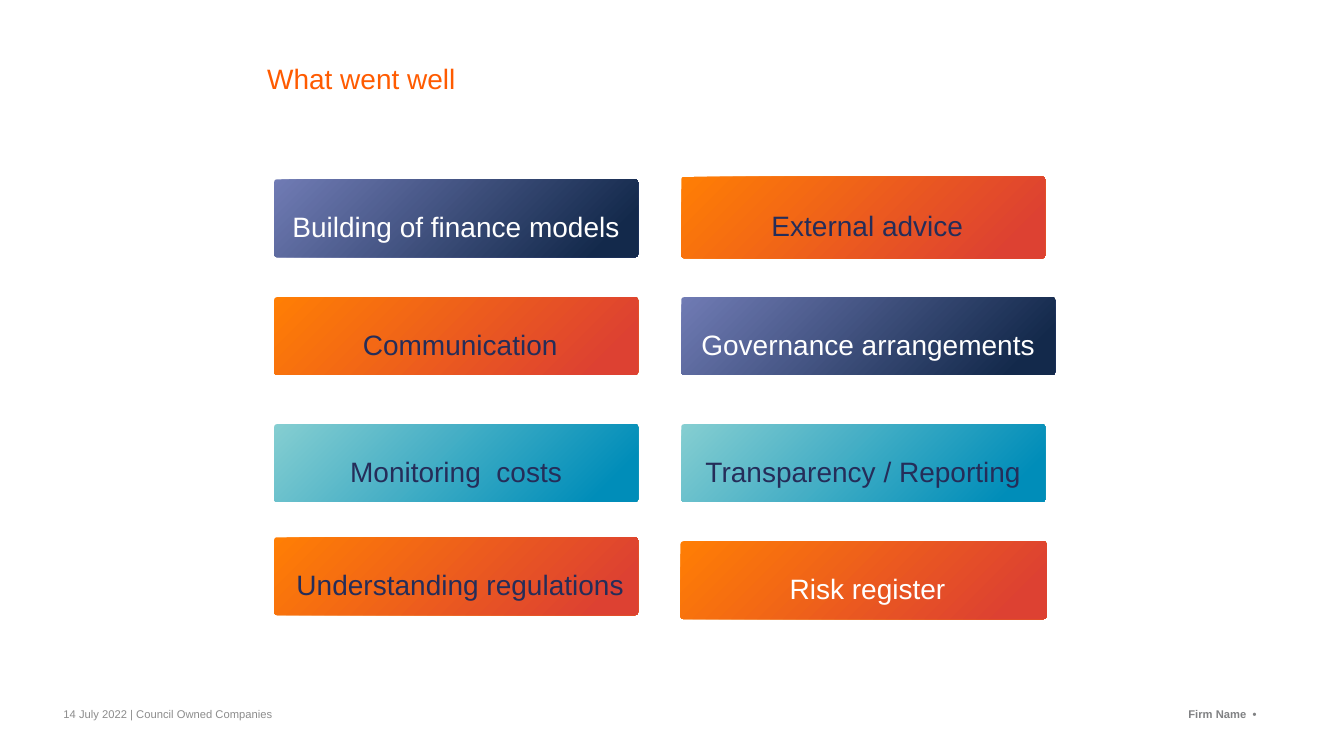
from dataclasses import dataclass

from pptx import Presentation, util as u
from pptx.dml.color import RGBColor
from pptx.enum import shapes, text


@dataclass(frozen=True)
class Theme:
    """Colours, font and type sizes of the slide."""
    font: str = "Arial"
    large: int = 20
    small: int = 8
    orange: str = "FF5B00"
    ink: str = "252D59"
    white: str = "FFFFFF"
    date_grey: str = "8C8C8C"
    owner_grey: str = "808183"


@dataclass(frozen=True)
class Style:
    """Gradient and text spacing shared by cards of one colour."""
    start: str
    end: str
    right_inset: float = 0.41
    space_before: int = 6


THEME = Theme()
ORANGE = Style("FF7E04", "DD4132", right_inset=0.2)
NAVY = Style("707BB4", "13294B", space_before=0)
TEAL = Style("85CED1", "008DB9")

CARD_WIDTH, CARD_HEIGHT = 9.17, 1.96
LEFT, RIGHT = 6.91, 17.17
ROW_TOPS = (4.52, 7.49, 10.69, 13.54)
CARDS = [
    ("Building of finance models", NAVY, THEME.white, (LEFT, ROW_TOPS[0], CARD_WIDTH, CARD_HEIGHT)),
    ("External advice", ORANGE, THEME.ink, (RIGHT, 4.45, CARD_WIDTH, 2.06)),
    ("Communication", ORANGE, THEME.ink, (LEFT, ROW_TOPS[1], CARD_WIDTH, CARD_HEIGHT)),
    ("Governance arrangements", NAVY, THEME.white, (RIGHT, ROW_TOPS[1], 9.42, CARD_HEIGHT)),
    ("Monitoring  costs", TEAL, THEME.ink, (LEFT, ROW_TOPS[2], CARD_WIDTH, CARD_HEIGHT)),
    ("Transparency / Reporting", TEAL, THEME.ink, (RIGHT, ROW_TOPS[2], CARD_WIDTH, CARD_HEIGHT)),
    ("Understanding regulations", ORANGE, THEME.ink, (LEFT, ROW_TOPS[3], CARD_WIDTH, CARD_HEIGHT)),
    ("Risk register", ORANGE, THEME.white, (17.15, 13.64, 9.22, CARD_HEIGHT)),
]


def apply(target, values):
    """Set each named attribute of the target."""
    for name, value in values.items():
        setattr(target, name, value)


def lengths(box):
    """Turn a box of centimetres into lengths."""
    return [u.Cm(value) for value in box]


def write(shape, words, size, colour, insets, frame_format, para_format, bold=False):
    """Put one formatted line of text into a shape."""
    frame = shape.text_frame
    sides = ("margin_left", "margin_top", "margin_right", "margin_bottom")
    apply(frame, dict(zip(sides, lengths(insets))))
    apply(frame, {"auto_size": text.MSO_AUTO_SIZE.NONE, "word_wrap": True, **frame_format})
    para = frame.paragraphs[0]
    apply(para, para_format)
    span = para.add_run()
    span.text = words
    apply(span.font, {"name": THEME.font, "size": u.Pt(size), "bold": bold})
    span.font.color.rgb = RGBColor.from_string(colour)


def add_title(page, box, words):
    """Move the title placeholder into the box and fill it."""
    title = page.shapes.title
    apply(title, dict(zip(("left", "top", "width", "height"), lengths(box))))
    write(title, words, THEME.large, THEME.orange, (0.25, 0.13, 0.25, 0.13),
          {"vertical_anchor": text.MSO_ANCHOR.TOP}, {"alignment": text.PP_ALIGN.LEFT})


def add_card(page, box, words, style, colour):
    """Draw one gradient card in the box."""
    card = page.shapes.add_shape(shapes.MSO_SHAPE.ROUNDED_RECTANGLE, *lengths(box))
    card.adjustments[0] = 0.036
    card.shadow.inherit = False
    card.line.fill.background()
    card.fill.gradient()
    card.fill.gradient_angle = 315
    stops = ((0, style.start), (0.9, style.end))
    for stop, (position, shade) in zip(card.fill.gradient_stops, stops):
        stop.position = position
        stop.color.rgb = RGBColor.from_string(shade)
    write(card, words, THEME.large, colour, (0.41, 0.41, style.right_inset, 0),
          {"vertical_anchor": text.MSO_ANCHOR.MIDDLE},
          {"alignment": text.PP_ALIGN.CENTER, "space_before": u.Pt(style.space_before)})


def add_footer(page, box):
    """Place the date line and the owner at the two ends of the box."""
    left, top, width, height = box
    owner_width = 1.85
    date = page.shapes.add_textbox(*lengths((left, top, 24, height)))
    write(date, "14 July 2022 | Council Owned Companies", THEME.small, THEME.date_grey,
          (0, 0, 0, 0), {}, {"alignment": text.PP_ALIGN.LEFT})
    owner = page.shapes.add_textbox(*lengths((left + width - owner_width, top, owner_width, 0.33)))
    write(owner, "Firm Name  • ", THEME.small, THEME.owner_grey, (0, 0, 0, 0),
          {"word_wrap": False}, {"alignment": text.PP_ALIGN.RIGHT}, bold=True)


def main():
    """Build the slide and save it."""
    deck = Presentation()
    apply(deck, {"slide_width": u.Cm(33.87), "slide_height": u.Cm(19.05)})
    page = deck.slides.add_slide(deck.slide_layouts.get_by_name("Title Only"))
    add_title(page, (6.48, 1.42, 21.41, 1.12), "What went well")
    for words, style, colour, box in CARDS:
        add_card(page, box, words, style, colour)
    add_footer(page, (1.6, 17.83, 30.15, 0.58))
    deck.save("out.pptx")


if __name__ == "__main__":
    main()
